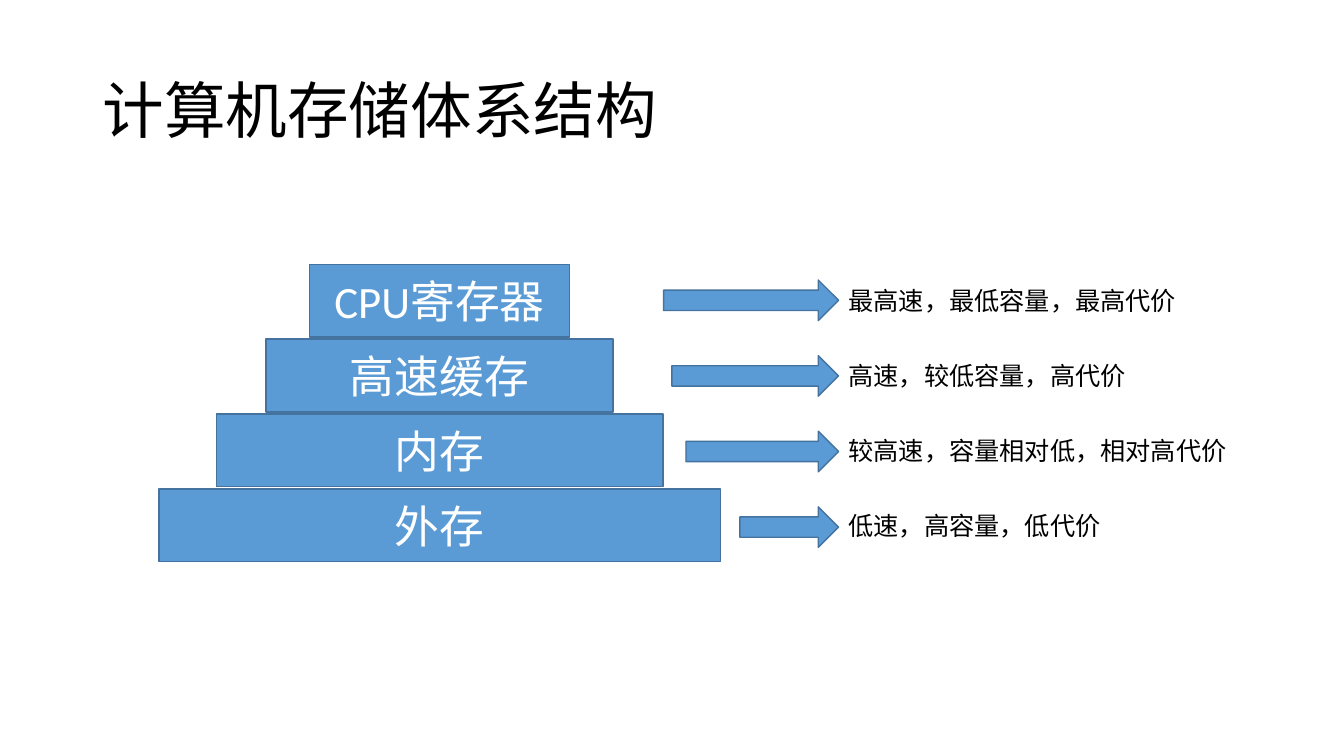
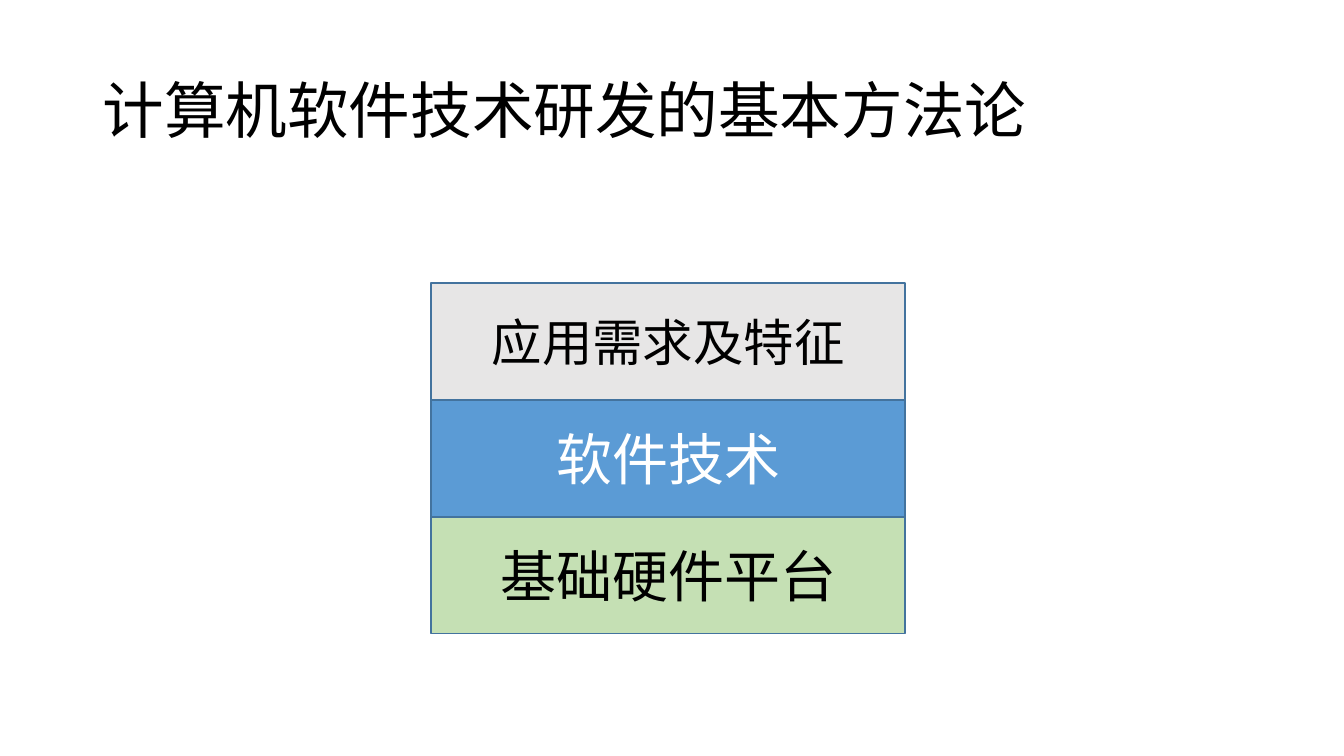
from pptx import Presentation
from pptx.dml.color import RGBColor
from pptx.enum import shapes, text
from pptx.util import Pt

BLUE = RGBColor(0x5B, 0x9B, 0xD5)
OUTLINE = RGBColor(0x43, 0x73, 0x9E)
GREY = RGBColor(0xE7, 0xE6, 0xE6)
GREEN = RGBColor(0xC5, 0xE0, 0xB4)
BLACK = RGBColor(0, 0, 0)
WHITE = RGBColor(255, 255, 255)
FONT = "Calibri"
RECT = shapes.MSO_SHAPE.RECTANGLE
ARROW = shapes.MSO_SHAPE.RIGHT_ARROW

prs = Presentation()
prs.slide_width, prs.slide_height = Pt(960), Pt(540)


def write(tf, content, size, color, align):
    tf.vertical_anchor = text.MSO_ANCHOR.MIDDLE
    p = tf.paragraphs[0]
    p.alignment = align
    r = p.add_run()
    r.text = content
    r.font.name = FONT
    r.font.size = Pt(size)
    r.font.color.rgb = color
    return p


def add_block(s, kind, left, top, width, height, fill):
    sp = s.shapes.add_shape(kind, Pt(left), Pt(top), Pt(width), Pt(height))
    sp.shadow.inherit = False
    sp.fill.solid()
    sp.fill.fore_color.rgb = fill
    sp.line.color.rgb = OUTLINE
    sp.line.width = Pt(1)
    return sp


slides = []
for title in ["计算机存储体系结构", "计算机软件技术研发的基本方法论"]:
    s = prs.slides.add_slide(prs.slide_layouts[5])
    sp = s.shapes.title
    sp.left, sp.top, sp.width, sp.height = Pt(66), Pt(28.75), Pt(828), Pt(104.4)
    p = write(sp.text_frame, title, 44, BLACK, text.PP_ALIGN.LEFT)
    p.line_spacing = 0.9
    slides.append(s)
memory, method = slides

levels = [
    ("CPU寄存器", 186, 474, "最高速，最低容量，最高代价"),
    ("高速缓存", 248, 480, "高速，较低容量，高代价"),
    ("内存", 319, 490, "较高速，容量相对低，相对高代价"),
    ("外存", 401, 528.5, "低速，高容量，低代价"),
]
center, arrow_tip, pitch = 314, 599, 53.5
for i, (name, width, arrow_left, trait) in enumerate(levels):
    offset = i * pitch
    sp = add_block(memory, RECT, center - width / 2, 188.75 + offset, width, 52, BLUE)
    write(sp.text_frame, name, 32, WHITE, text.PP_ALIGN.CENTER)
    add_block(memory, ARROW, arrow_left, 200 + i * 54, arrow_tip - arrow_left, 29, BLUE)
    sp = memory.shapes.add_textbox(Pt(arrow_tip), Pt(200 + offset), Pt(18 * len(trait) + 16), Pt(29))
    tf = sp.text_frame
    tf.word_wrap = False
    tf.auto_size = text.MSO_AUTO_SIZE.SHAPE_TO_FIT_TEXT
    write(tf, trait, 18, BLACK, text.PP_ALIGN.LEFT)

layers = [
    ("应用需求及特征", 36, GREY, BLACK),
    ("软件技术", 40, BLUE, WHITE),
    ("基础硬件平台", 40, GREEN, BLACK),
]
layer_height = 83.5
for i, (name, size, fill, color) in enumerate(layers):
    sp = add_block(method, RECT, 308, 202.25 + i * layer_height, 338.5, layer_height, fill)
    write(sp.text_frame, name, size, color, text.PP_ALIGN.CENTER)

prs.save("out.pptx")
